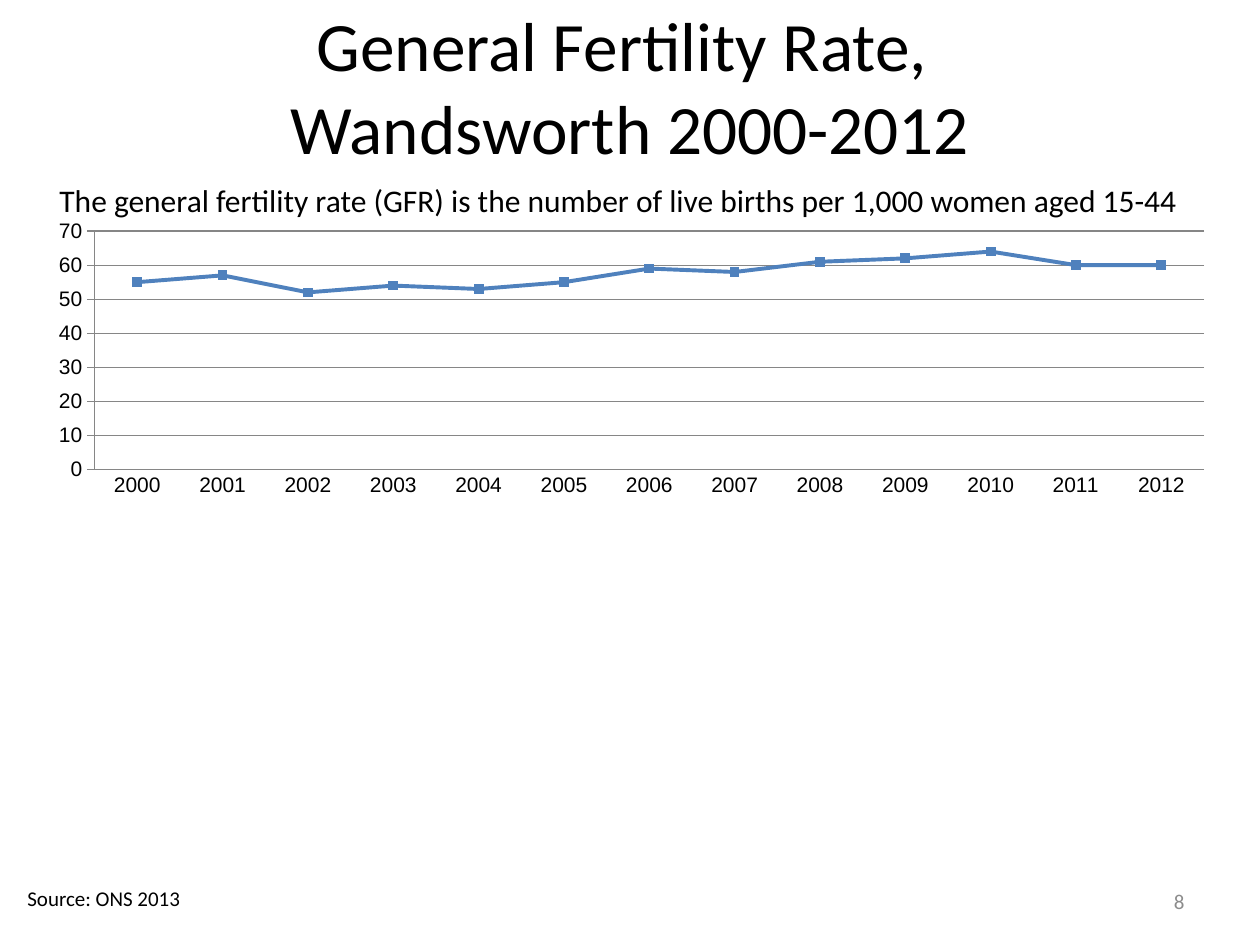
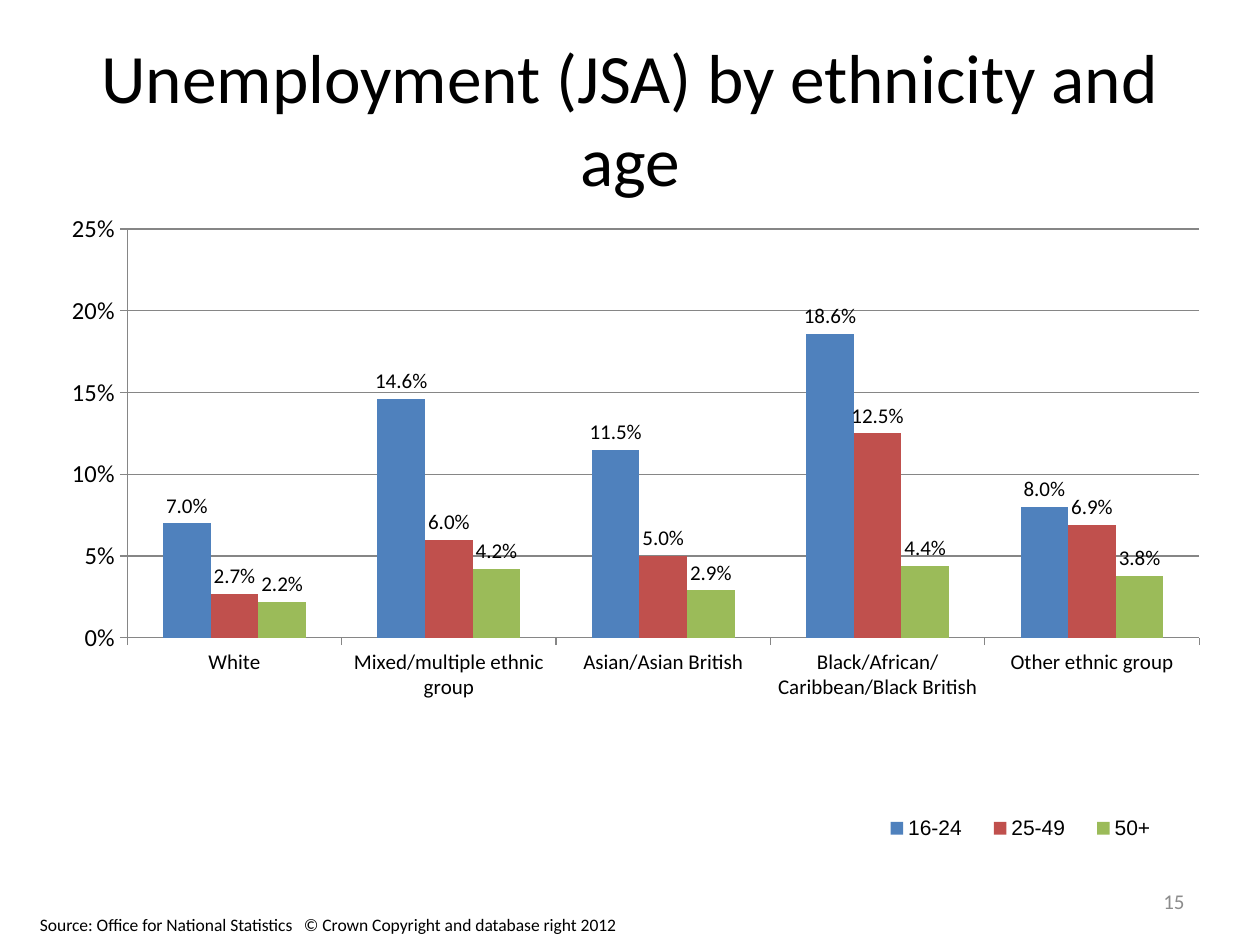
from lxml import etree
from pptx import Presentation
from pptx.chart.data import CategoryChartData
from pptx.dml.color import RGBColor
from pptx.enum.chart import (XL_CHART_TYPE as Chart, XL_LABEL_POSITION as LabelPos,
                             XL_LEGEND_POSITION as LegendPos, XL_MARKER_STYLE as Marker,
                             XL_TICK_MARK as Tick)
from pptx.enum.text import MSO_ANCHOR as Anchor, PP_ALIGN as Align
from pptx.oxml import parse_xml
from pptx.oxml.ns import nsdecls, qn
from pptx.util import Emu, Pt

BLACK = RGBColor(0x00, 0x00, 0x00)
GREY = RGBColor(0x8C, 0x8C, 0x8C)
AXIS_GREY = RGBColor(0x86, 0x86, 0x86)
BLUE = RGBColor(0x4F, 0x81, 0xBD)
RED = RGBColor(0xC0, 0x50, 0x4D)
GREEN = RGBColor(0x9B, 0xBB, 0x59)

PX_PER_INCH = 126
BODY_FONT, CHART_FONT = "Calibri", "Arial"

FERTILITY = {
    "title": "General Fertility Rate, \vWandsworth 2000-2012",
    "definition": "The general fertility rate (GFR) is the number of live births "
                  "per 1,000 women aged 15-44",
    "source": "Source: ONS 2013",
    "number": "8",
    "years": [str(year) for year in range(2000, 2013)],
    "series": [("Series 1", BLUE, (55, 57, 52, 54, 53, 55, 59, 58, 61, 62, 64, 60, 60))],
}
UNEMPLOYMENT = {
    "title": "Unemployment (JSA) by ethnicity and age",
    "source": "Source: Office for National Statistics\t© Crown Copyright and database right 2012",
    "number": "15",
    "groups": ["White", "Mixed/multiple ethnic group", "Asian/Asian British",
               "Black/African/Caribbean/Black British", "Other ethnic group"],
    "series": [
        ("16-24", BLUE, (0.07, 0.146, 0.115, 0.186, 0.08)),
        ("25-49", RED, (0.027, 0.06, 0.05, 0.125, 0.069)),
        ("50+", GREEN, (0.022, 0.042, 0.029, 0.044, 0.038)),
    ],
}


def px(n):
    return Emu(round(n * 914400 / PX_PER_INCH))


def set_font(font, size, color=BLACK, name=BODY_FONT):
    font.size, font.name, font.bold = Pt(size), name, False
    font.color.rgb = color


def add_text(slide, box, text, size, color=BLACK, align=Align.LEFT, anchor=Anchor.TOP, wrap=True):
    tf = slide.shapes.add_textbox(*map(px, box)).text_frame
    tf.word_wrap, tf.vertical_anchor = wrap, anchor
    p = tf.paragraphs[0]
    p.text, p.alignment = text, align
    set_font(p.font, size, color)
    return tf


def add_base(prs, content, title_box):
    """Add a slide with its title and page number."""
    slide = prs.slides.add_slide(prs.slide_layouts[6])
    add_text(slide, title_box, content["title"], 39.6, align=Align.CENTER, anchor=Anchor.MIDDLE)
    add_text(slide, (903, 876, 294, 50), content["number"], 12, GREY, Align.RIGHT, Anchor.MIDDLE)
    return slide


def set_layout(parent, after, x, y, w, h, inner=False):
    """Place a plot area or legend by fractions of the chart."""
    for old in parent.findall(qn("c:layout")):
        parent.remove(old)
    target = '<c:layoutTarget val="inner"/>' if inner else ""
    values = "".join(f'<c:{tag} val="{v}"/>' for tag, v in zip("xywh", (x, y, w, h)))
    layout = parse_xml(
        f'<c:layout {nsdecls("c")}><c:manualLayout>{target}<c:xMode val="edge"/>'
        f'<c:yMode val="edge"/>{values}</c:manualLayout></c:layout>')
    parent.insert(0 if after is None else parent.index(after) + 1, layout)


def add_chart(slide, kind, box, categories, series, plot_box, font_name, axis_sizes):
    data = CategoryChartData()
    data.categories = categories
    for name, _, values in series:
        data.add_series(name, values)
    chart = slide.shapes.add_chart(kind, *map(px, box), data).chart
    chart.has_title = chart.has_legend = False
    chart.plots[0].vary_by_categories = False
    set_font(chart.font, 12, name=font_name)
    set_layout(chart.plots[0]._element.getparent(), None, *plot_box, inner=True)
    for axis, size in zip((chart.category_axis, chart.value_axis), axis_sizes):
        set_font(axis.tick_labels.font, size, name=font_name)
        axis.format.line.color.rgb = AXIS_GREY
        axis.major_tick_mark, axis.minor_tick_mark = Tick.OUTSIDE, Tick.NONE
    chart.value_axis.has_major_gridlines = True
    chart.value_axis.major_gridlines.format.line.color.rgb = AXIS_GREY
    chart.value_axis.minimum_scale = 0
    return chart


def build_fertility(prs):
    c = FERTILITY
    slide = add_base(prs, c, (15, 6, 1230, 158))
    add_text(slide, (47, 175, 1181, 50), c["definition"], 18)
    add_text(slide, (15, 879, 185, 38), c["source"], 12, wrap=False)
    chart = add_chart(slide, Chart.LINE_MARKERS, (35, 214, 1193, 287), c["years"], c["series"],
                      (0.05, 0.06, 0.93, 0.83), CHART_FONT, (12, 12))
    chart.category_axis.major_tick_mark = Tick.NONE
    chart.value_axis.maximum_scale, chart.value_axis.major_unit = 70, 10
    for s, (_, color, _) in zip(chart.plots[0].series, c["series"]):
        s.smooth = False
        s.format.line.color.rgb, s.format.line.width = color, Pt(2.25)
        s.marker.style, s.marker.size = Marker.SQUARE, 5
        s.marker.format.fill.solid()
        s.marker.format.fill.fore_color.rgb = color
        s.marker.format.line.color.rgb = color


def build_unemployment(prs):
    c = UNEMPLOYMENT
    slide = add_base(prs, c, (63, 38, 1134, 158))
    chart = add_chart(slide, Chart.COLUMN_CLUSTERED, (44, 214, 1191, 694), c["groups"],
                      c["series"], (0.07, 0.02, 0.9, 0.59), BODY_FONT, (12, 14))
    axis = chart.value_axis
    axis.maximum_scale, axis.major_unit = 0.25, 0.05
    axis.tick_labels.number_format, axis.tick_labels.number_format_is_linked = "0%", False
    plot = chart.plots[0]
    plot.gap_width, plot.overlap = 150, 0
    for s, (_, color, _) in zip(plot.series, c["series"]):
        s.format.fill.solid()
        s.format.fill.fore_color.rgb = color
        labels = s.data_labels
        labels.show_value, labels.position = True, LabelPos.OUTSIDE_END
        labels.number_format, labels.number_format_is_linked = "0.0%", False
        set_font(labels.font, 12)
    chart.has_legend = True
    legend = chart.legend
    legend.position, legend.include_in_layout = LegendPos.RIGHT, False
    set_font(legend.font, 12, name=CHART_FONT)
    set_layout(legend._element, legend._element.find(qn("c:legendPos")), 0.69, 0.86, 0.26, 0.05)

    tf = add_text(slide, (25, 906, 843, 37), c["source"], 10)
    tf.margin_left = tf.margin_right = px(15)
    tf.margin_top = tf.margin_bottom = px(8)
    tabs = etree.Element(qn("a:tabLst"))
    etree.SubElement(tabs, qn("a:tab"), pos=str(px(264)), algn="l")
    tf.paragraphs[0]._p.get_or_add_pPr().insert(0, tabs)


def main():
    prs = Presentation()
    prs.slide_width, prs.slide_height = px(1260), px(945)
    build_fertility(prs)
    build_unemployment(prs)
    prs.save("out.pptx")


if __name__ == "__main__":
    main()
